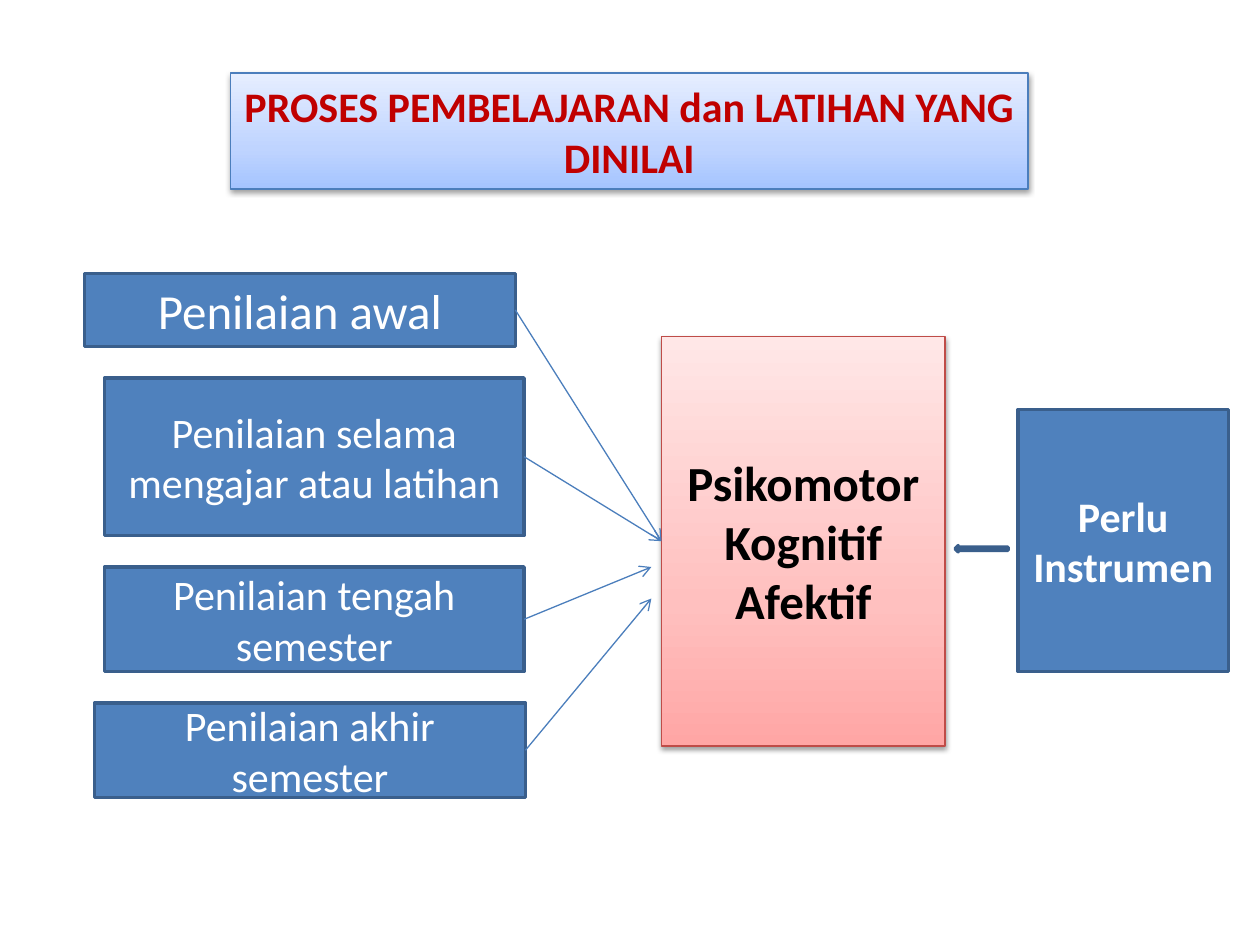
from copy import deepcopy
from dataclasses import dataclass

from lxml.etree import SubElement
from pptx import Presentation
from pptx.dml.color import RGBColor
from pptx.enum.shapes import MSO_CONNECTOR, MSO_SHAPE
from pptx.enum.text import MSO_ANCHOR, PP_ALIGN
from pptx.oxml.ns import qn
from pptx.util import Inches, Pt


@dataclass(frozen=True)
class Theme:
    font: str = "Calibri"
    body: int = 24
    large: int = 28
    white: str = "FFFFFF"
    black: str = "000000"
    title: str = "C00000"
    box: str = "4F81BD"
    box_line: str = "3A5F8C"
    arrow: str = "4B7EBC"
    domain_line: str = "BF4C48"
    blue_gradient: tuple = ("A4C4FF", "BFD4FF", "E6EEFF")
    red_gradient: tuple = ("FFA6A5", "FFC0BF", "FFE7E7")
    stops: tuple = (0, 0.35, 1)
    thin: float = 0.75
    thick: float = 2


THEME = Theme()
LEFT_SIDE, RIGHT_SIDE = 1, 3  # connection sites of a rectangle


def rgb(value):
    return RGBColor.from_string(value)


def write(shape, text, *, size=THEME.body, color=THEME.white, bold=False):
    """Fill a shape with centred text, one paragraph per line."""
    frame = shape.text_frame
    frame.word_wrap = True
    frame.vertical_anchor = MSO_ANCHOR.MIDDLE
    frame.text = text
    for paragraph in frame.paragraphs:
        paragraph.alignment = PP_ALIGN.CENTER
        for run in paragraph.runs:
            run.font.name = THEME.font
            run.font.size = Pt(size)
            run.font.bold = bold
            run.font.color.rgb = rgb(color)


class SlideBuilder:
    def __init__(self, slide, theme):
        self.slide = slide
        self.theme = theme

    def shape(self, kind, place, line, width):
        shape = self.slide.shapes.add_shape(kind, *map(Inches, place))
        shape.shadow.inherit = False
        shape.line.color.rgb = rgb(line)
        shape.line.width = Pt(width)
        return shape

    def box(self, place, text="", kind=MSO_SHAPE.RECTANGLE, **text_format):
        box = self.shape(kind, place, self.theme.box_line, self.theme.thick)
        box.fill.solid()
        box.fill.fore_color.rgb = rgb(self.theme.box)
        if text:
            write(box, text, **text_format)
        return box

    def panel(self, place, text, gradient, line, **text_format):
        """Rectangle with a three-colour gradient, rising from the bottom, and a soft shadow."""
        panel = self.shape(MSO_SHAPE.RECTANGLE, place, line, self.theme.thin)
        panel.fill.gradient()
        panel.fill.gradient_angle = 90
        properties = panel._element.spPr
        first_stop = properties.find(".//" + qn("a:gs"))
        first_stop.addnext(deepcopy(first_stop))
        for stop, position, color in zip(panel.fill.gradient_stops, self.theme.stops, gradient):
            stop.position = position
            stop.color.rgb = rgb(color)
        shadow = SubElement(properties.find(qn("a:effectLst")), qn("a:outerShdw"),
                            blurRad=str(Pt(3.1)), dist=str(Pt(1.6)),
                            dir="5400000", rotWithShape="0")
        shade = SubElement(shadow, qn("a:srgbClr"), val=self.theme.black)
        SubElement(shade, qn("a:alpha"), val="38000")
        write(panel, text, **text_format)
        return panel

    def arrow(self, source, target=None, end=(0, 0)):
        """Arrow from a box's right side to a target's left side or to a free point."""
        arrow = self.slide.shapes.add_connector(
            MSO_CONNECTOR.STRAIGHT, 0, 0, *map(Inches, end))
        arrow.begin_connect(source, RIGHT_SIDE)
        if target is not None:
            arrow.end_connect(target, LEFT_SIDE)
        arrow.line.color.rgb = rgb(self.theme.arrow)
        arrow.line.width = Pt(self.theme.thin)
        properties = arrow._element.spPr
        SubElement(properties.find(qn("a:ln")), qn("a:tailEnd"), type="arrow")
        SubElement(properties, qn("a:effectLst"))


def main():
    presentation = Presentation()
    presentation.slide_width = Inches(10)
    presentation.slide_height = Inches(7.5)
    slide = presentation.slides.add_slide(presentation.slide_layouts[6])
    builder = SlideBuilder(slide, THEME)

    # Title
    builder.panel((1.83, 0.58, 6.33, 0.92), "PROSES PEMBELAJARAN dan LATIHAN YANG DINILAI",
                  THEME.blue_gradient, THEME.arrow, color=THEME.title, bold=True)

    # Assessment stages
    initial = builder.box((0.67, 2.17, 3.42, 0.58), "Penilaian awal", size=THEME.large)
    ongoing = builder.box((0.83, 3, 3.33, 1.25), "Penilaian selama mengajar atau latihan")
    midterm = builder.box((0.83, 4.5, 3.33, 0.83), "Penilaian tengah semester")
    final = builder.box((0.75, 5.58, 3.42, 0.75), "Penilaian akhir semester")

    # Assessed domains
    domains = builder.panel((5.25, 2.67, 2.25, 3.25), "Psikomotor\nKognitif\nAfektif",
                            THEME.red_gradient, THEME.domain_line,
                            size=THEME.large, color=THEME.black, bold=True)

    # Arrows from the stages to the domains
    builder.arrow(initial, domains)
    builder.arrow(ongoing, domains)
    builder.arrow(midterm, end=(5.17, 4.5))
    builder.arrow(final, end=(5.17, 4.75))

    # Instrument needed
    builder.box((8.08, 3.25, 1.67, 2.08), "Perlu Instrumen", bold=True)
    builder.box((7.58, 4.33, 0.42, 0.05), kind=MSO_SHAPE.LEFT_ARROW)

    presentation.save("out.pptx")


if __name__ == "__main__":
    main()
